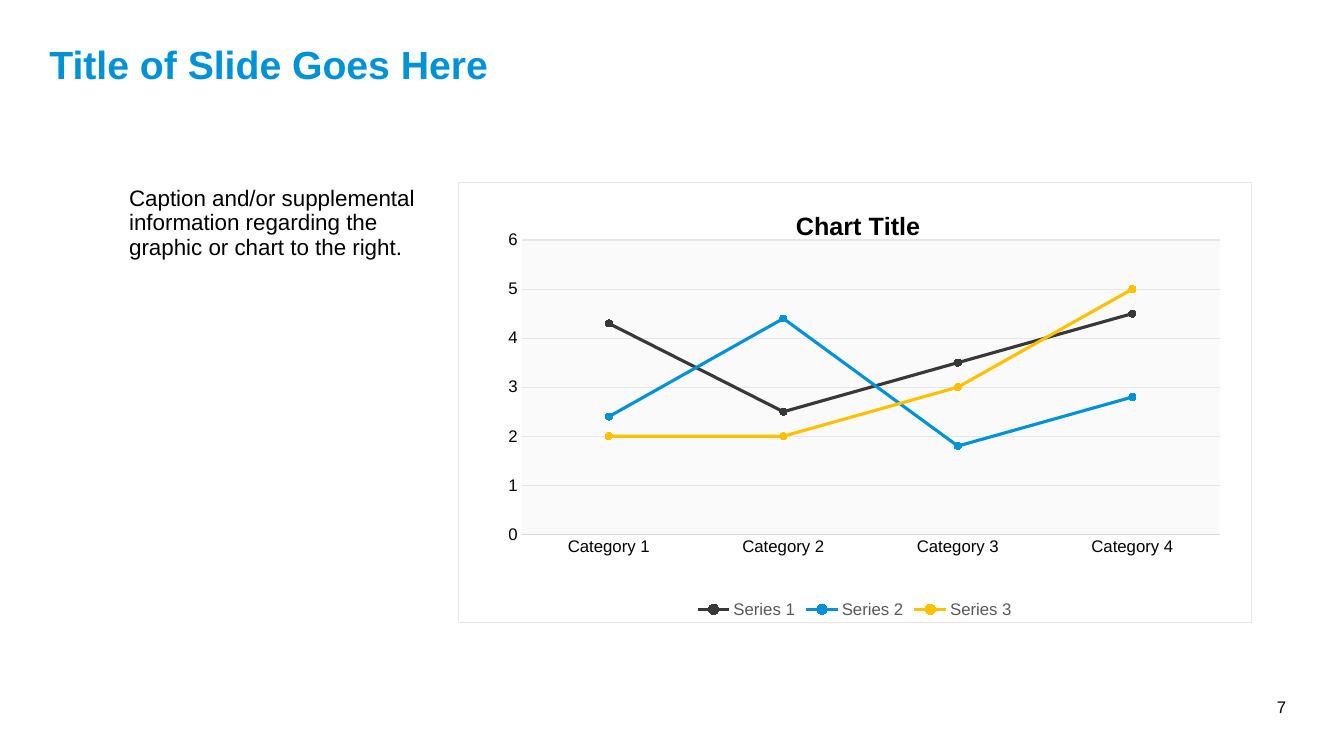
import dataclasses

import lxml.etree
import pptx
import pptx.chart.data
import pptx.dml.color
import pptx.enum.chart
import pptx.enum.text
import pptx.oxml
import pptx.oxml.ns
import pptx.util

Pt = pptx.util.Pt
FONT = "Arial"
COLORS = {
    "black": "000000", "blue": "0092D5", "charcoal": "383838", "gold": "FFC000",
    "legend": "595959", "grid": "E7E6E6", "axis": "D9D9D9", "plot": "F2F2F2",
}


@dataclasses.dataclass
class TextBlock:
    text: str
    frame: tuple[float, float, float, float]
    size: float
    color: str = "black"
    bold: bool = False
    align: pptx.enum.text.PP_ALIGN = pptx.enum.text.PP_ALIGN.LEFT
    anchor: pptx.enum.text.MSO_ANCHOR = pptx.enum.text.MSO_ANCHOR.TOP
    line_spacing: float = 0.9


@dataclasses.dataclass
class Series:
    name: str
    values: tuple[float, ...]
    color: str


TITLE = TextBlock("Title of Slide Goes Here", (28.1, 28.8, 866.2, 66.2), 28, "blue", True)
CAPTION = TextBlock(
    "Caption and/or supplemental information regarding the graphic or chart to the right.",
    (85, 130.3, 220.3, 317.5), 16)
PAGE_NUMBER = TextBlock(
    "7", (709.9, 490.3, 216, 28.8), 12, align=pptx.enum.text.PP_ALIGN.RIGHT,
    anchor=pptx.enum.text.MSO_ANCHOR.MIDDLE, line_spacing=1)

CHART_FRAME = (326.9, 130.3, 567.4, 314.6)
CATEGORIES = [f"Category {number}" for number in range(1, 5)]
SERIES = [
    Series("Series 1", (4.3, 2.5, 3.5, 4.5), "charcoal"),
    Series("Series 2", (2.4, 4.4, 1.8, 2.8), "blue"),
    Series("Series 3", (2, 2, 3, 5), "gold"),
]


def rgb(name: str) -> pptx.dml.color.RGBColor:
    return pptx.dml.color.RGBColor.from_string(COLORS[name])


def style_font(font, size: float, color: str = "black", bold: bool = False) -> None:
    font.name = FONT
    font.size = Pt(size)
    font.bold = bold
    font.color.rgb = rgb(color)


def style_line(line, color: str, width: float) -> None:
    line.color.rgb = rgb(color)
    line.width = Pt(width)


def fill_text(box, block: TextBlock) -> None:
    box.left, box.top, box.width, box.height = map(Pt, block.frame)
    frame = box.text_frame
    frame.word_wrap = True
    frame.auto_size = pptx.enum.text.MSO_AUTO_SIZE.NONE
    frame.vertical_anchor = block.anchor
    para = frame.paragraphs[0]
    properties = para._p.get_or_add_pPr()
    properties.set("marL", "0")
    properties.set("indent", "0")
    lxml.etree.SubElement(properties, pptx.oxml.ns.qn("a:buNone"))
    para.alignment = block.align
    para.line_spacing = block.line_spacing
    para.space_before = Pt(0)
    span = para.add_run()
    span.text = block.text
    style_font(span.font, block.size, block.color, block.bold)


def chart_part(xml: str):
    """Parse a chart element, adding the namespaces to its root tag."""
    root, rest = xml.split(">", 1)
    return pptx.oxml.parse_xml(f"{root} {pptx.oxml.ns.nsdecls('c', 'a')}>{rest}")


def set_layout(parent, index: int, **fractions: float) -> None:
    """Place a chart part by fractions of the chart's size."""
    for old in parent.findall(pptx.oxml.ns.qn("c:layout")):
        parent.remove(old)
    target = '<c:layoutTarget val="inner"/>' if "w" in fractions else ""
    modes = '<c:xMode val="edge"/><c:yMode val="edge"/>'
    places = "".join(f'<c:{key} val="{value}"/>' for key, value in fractions.items())
    parent.insert(index, chart_part(
        f"<c:layout><c:manualLayout>{target}{modes}{places}</c:manualLayout></c:layout>"))


def style_axis(axis) -> None:
    axis.major_tick_mark = axis.minor_tick_mark = pptx.enum.chart.XL_TICK_MARK.NONE
    style_font(axis.tick_labels.font, 12)


def add_line_chart(page) -> None:
    data = pptx.chart.data.CategoryChartData()
    data.categories = CATEGORIES
    for series in SERIES:
        data.add_series(series.name, series.values)
    chart = page.shapes.add_chart(
        pptx.enum.chart.XL_CHART_TYPE.LINE_MARKERS, *map(Pt, CHART_FRAME), data).chart
    style_font(chart.font, 10)

    # Chart title
    chart.has_title = True
    span = chart.chart_title.text_frame.paragraphs[0].add_run()
    span.text = "Chart Title"
    style_font(span.font, 18, bold=True)
    chart.chart_title.include_in_layout = False
    set_layout(chart.chart_title._element, 1, x=0.42, y=0.05)

    # Axes and gridlines
    style_axis(chart.category_axis)
    style_line(chart.category_axis.format.line, "axis", 0.75)
    values = chart.value_axis
    style_axis(values)
    values.minimum_scale, values.maximum_scale, values.major_unit = 0, 6, 1
    values.format.line.fill.background()
    style_line(values.major_gridlines.format.line, "grid", 0.75)

    # Legend
    chart.has_legend = True
    chart.legend.position = pptx.enum.chart.XL_LEGEND_POSITION.BOTTOM
    chart.legend.include_in_layout = False
    style_font(chart.legend.font, 12, "legend")

    # Series lines and markers
    chart.plots[0].vary_by_categories = False
    for line, series in zip(chart.plots[0].series, SERIES):
        line.smooth = False
        style_line(line.format.line, series.color, 2.25)
        line.marker.style = pptx.enum.chart.XL_MARKER_STYLE.CIRCLE
        line.marker.size = 5
        line.marker.format.fill.solid()
        line.marker.format.fill.fore_color.rgb = rgb(series.color)
        style_line(line.marker.format.line, series.color, 0.75)

    # Plot background and chart border
    body = chart._chartSpace.find(pptx.oxml.ns.qn("c:chart"))
    plot = body.find(pptx.oxml.ns.qn("c:plotArea"))
    set_layout(plot, 0, x=0.08, y=0.13, w=0.88, h=0.67)
    plot.append(chart_part(
        f'<c:spPr><a:solidFill><a:srgbClr val="{COLORS["plot"]}"><a:alpha val="35000"/>'
        "</a:srgbClr></a:solidFill></c:spPr>"))
    body.addnext(chart_part(
        f'<c:spPr><a:noFill/><a:ln w="{Pt(0.75)}"><a:solidFill>'
        f'<a:srgbClr val="{COLORS["grid"]}"/></a:solidFill></a:ln></c:spPr>'))


def main() -> None:
    deck = pptx.Presentation()
    deck.slide_width, deck.slide_height = Pt(960), Pt(540)
    page = deck.slides.add_slide(deck.slide_layouts[1])
    fill_text(page.shapes.title, TITLE)
    fill_text(page.placeholders[1], CAPTION)
    add_line_chart(page)
    fill_text(page.shapes.add_textbox(*map(Pt, PAGE_NUMBER.frame)), PAGE_NUMBER)
    deck.save("out.pptx")


if __name__ == "__main__":
    main()
